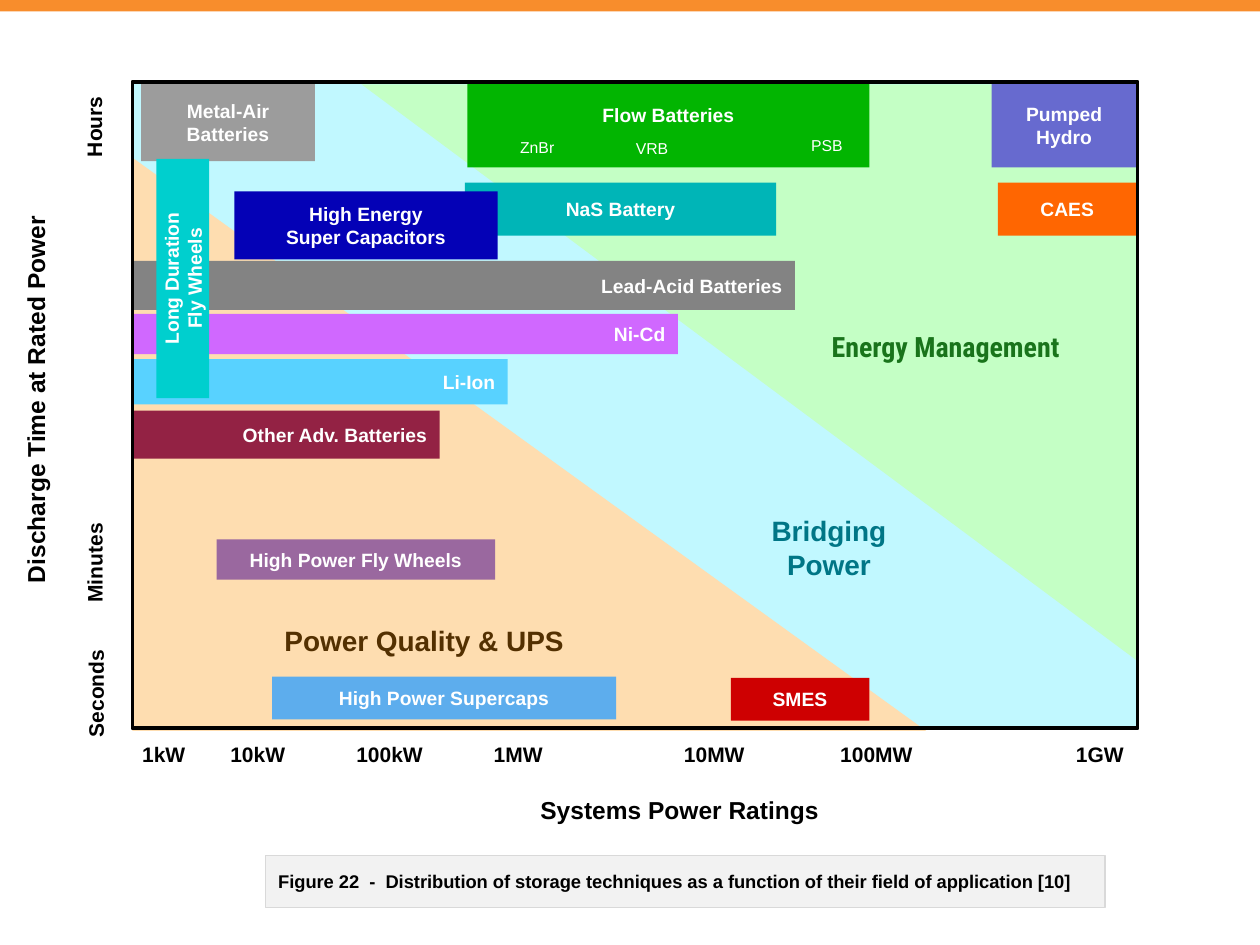
from dataclasses import dataclass

from pptx import Presentation
from pptx.dml.color import RGBColor
from pptx.enum.shapes import MSO_SHAPE as Shape
from pptx.enum.text import MSO_ANCHOR as Anchor, MSO_AUTO_SIZE as AutoSize, PP_ALIGN as Align
from pptx.util import Emu, Pt

PX = 9144  # 100 px to the inch


@dataclass(frozen=True)
class Theme:
    font: str = "Arial"
    condensed: str = "Roboto Condensed"
    black: str = "000000"
    white: str = "FFFFFF"
    accent: str = "F88D2C"
    caption_fill: str = "F2F2F2"
    caption_line: str = "D9D9D9"
    bridging_fill: str = "C1F8FF"
    bridging_text: str = "007686"
    quality_fill: str = "FEDDB0"
    quality_text: str = "533001"
    management_fill: str = "C4FFC5"
    management_text: str = "19741B"
    metal_air: str = "9C9C9C"
    flow: str = "02B501"
    pumped_hydro: str = "676ACF"
    supercaps: str = "5DADED"
    smes: str = "CE0001"
    caes: str = "FF6601"
    power_wheels: str = "9A689F"
    nas: str = "00B5B7"
    energy_caps: str = "0401B6"
    lead_acid: str = "838383"
    ni_cd: str = "D068FF"
    li_ion: str = "58D2FF"
    other: str = "932244"
    long_wheels: str = "00CFCE"
    zone_size: float = 16
    axis_size: float = 14
    tick_size: float = 12
    bar_size: float = 11
    caption_size: float = 10.5
    chemistry_size: float = 9


class Slide:
    def __init__(self, deck, theme):
        self.theme = theme
        self.page = deck.slides.add_slide(deck.slide_layouts[6])

    def add_text(self, box, text, size, color, align=None, bold=True, font=None):
        """Fill a box with one paragraph for each line of text."""
        frame = box.text_frame
        for index, line in enumerate(text.split("\n")):
            para = frame.add_paragraph() if index else frame.paragraphs[0]
            para.alignment = align
            span = para.add_run()
            span.text = line
            span.font.name = font or self.theme.font
            span.font.size = Pt(size)
            span.font.bold = bold
            span.font.color.rgb = RGBColor.from_string(color)

    def shape(self, place, fill=None, line=None, width=1, kind=Shape.RECTANGLE, turn=0):
        box = self.page.shapes.add_shape(kind, *(Emu(side * PX) for side in place))
        box.shadow.inherit = False
        box.rotation = turn
        if fill:
            box.fill.solid()
            box.fill.fore_color.rgb = RGBColor.from_string(fill)
        else:
            box.fill.background()
        if line:
            box.line.color.rgb = RGBColor.from_string(line)
            box.line.width = Pt(width)
        else:
            box.line.fill.background()
        return box

    def bar(self, place, fill, text, align=Align.CENTER, turn=0):
        """Add a coloured block that names one storage technique."""
        box = self.shape(place, fill, turn=turn)
        box.text_frame.word_wrap = True
        box.text_frame.vertical_anchor = Anchor.MIDDLE
        self.add_text(box, text, self.theme.bar_size, self.theme.white, align)
        return box

    def label(self, place, text, size, color, wrap=True, turn=0, **style):
        box = self.page.shapes.add_textbox(*(Emu(side * PX) for side in place))
        box.rotation = turn
        box.text_frame.word_wrap = wrap
        box.text_frame.auto_size = AutoSize.SHAPE_TO_FIT_TEXT
        self.add_text(box, text, size, color, **style)

    def axis_label(self, place, text, size, turn=0):
        self.label(place, text, size, self.theme.black, wrap=False, turn=turn)

    def caption(self, place, text):
        theme = self.theme
        box = self.shape(place, theme.caption_fill, theme.caption_line, 0.75)
        box.text_frame.word_wrap = True
        box.text_frame.vertical_anchor = Anchor.MIDDLE
        self.add_text(box, text, theme.caption_size, theme.black, Align.LEFT)


def add_zones(slide, plot):
    theme = slide.theme
    slide.shape(plot, theme.bridging_fill, theme.black, 1.5)
    slide.shape((105, 125, 630, 455), theme.quality_fill, kind=Shape.RIGHT_TRIANGLE)
    slide.shape((287, 67, 615, 457), theme.management_fill, kind=Shape.RIGHT_TRIANGLE, turn=180)
    slide.label((216, 490, 304, 37), "Power Quality & UPS", theme.zone_size, theme.quality_text)
    slide.label((608, 257, 285, 37), "Energy Management", theme.zone_size,
                theme.management_text, align=Align.CENTER, font=theme.condensed)
    slide.label((570, 403, 176, 64), "Bridging\nPower", theme.zone_size,
                theme.bridging_text, align=Align.CENTER)


def add_techniques(slide, plot_left):
    theme = slide.theme
    slide.bar((112, 66, 138, 62), theme.metal_air, "Metal-Air\nBatteries")
    flow = slide.bar((371, 66, 319, 67), theme.flow, "Flow Batteries")
    flow.text_frame.margin_bottom = Emu(22 * PX)  # room for the chemistries
    slide.bar((787, 66, 115, 67), theme.pumped_hydro, "Pumped\nHydro")

    chemistries = [
        ((403, 104, 80, 25), "ZnBr", Align.LEFT),
        ((634, 103, 67, 25), "PSB", Align.LEFT),
        ((484, 105, 67, 25), "VRB", Align.CENTER),
    ]
    for place, name, align in chemistries:
        slide.label(place, name, theme.chemistry_size, theme.white, align=align, bold=False)

    centred_bars = [
        ((216, 537, 273, 34), theme.supercaps, "High Power Supercaps"),
        ((580, 538, 110, 34), theme.smes, "SMES"),
        ((792, 145, 110, 42), theme.caes, "CAES"),
        ((172, 428, 221, 32), theme.power_wheels, "High Power Fly Wheels"),
        ((369, 145, 247, 42), theme.nas, "NaS Battery"),
        ((186, 152, 209, 54), theme.energy_caps, "High Energy\nSuper Capacitors"),
    ]
    for place, fill, name in centred_bars:
        slide.bar(place, fill, name)

    bars_from_axis = [
        (207, 526, 39, theme.lead_acid, "Lead-Acid Batteries"),
        (249, 433, 32, theme.ni_cd, "Ni-Cd"),
        (285, 298, 36, theme.li_ion, "Li-Ion"),
        (326, 244, 38, theme.other, "Other Adv. Batteries"),
    ]
    for top, width, height, fill, name in bars_from_axis:
        slide.bar((plot_left, top, width, height), fill, name, Align.RIGHT)
    slide.bar((50, 200, 190, 42), theme.long_wheels, "Long Duration\nFly Wheels", turn=270)


def add_axes(slide):
    theme = slide.theme
    power_ticks = [
        (103, 55, "1kW"), (173, 64, "10kW"), (273, 73, "100kW"), (382, 59, "1MW"),
        (533, 69, "10MW"), (657, 78, "100MW"), (844, 59, "1GW"),
    ]
    for left, width, name in power_ticks:
        slide.axis_label((left, 584, width, 30), name, theme.tick_size)
    slide.axis_label((419, 626, 242, 34), "Systems Power Ratings", theme.axis_size)

    time_ticks = [(31, 535, 90, "Seconds"), (33, 431, 84, "Minutes"), (40, 85, 69, "Hours")]
    for left, top, width, name in time_ticks:
        slide.axis_label((left, top, width, 30), name, theme.tick_size, turn=270)
    slide.axis_label((-128, 299, 313, 34), "Discharge Time at Rated Power", theme.axis_size, turn=270)


def main():
    deck = Presentation()
    deck.slide_width, deck.slide_height = Emu(1000 * PX), Emu(750 * PX)
    theme = Theme()
    slide = Slide(deck, theme)
    plot = (105, 65, 798, 513)

    slide.shape((0, -1, 1000, 10), theme.accent)
    slide.caption((211, 679, 666, 41), "Figure 22  -  Distribution of storage techniques "
                  "as a function of their field of application [10]")
    add_zones(slide, plot)
    add_techniques(slide, plot[0])
    slide.shape(plot, line=theme.black, width=2)
    add_axes(slide)
    deck.save("out.pptx")


if __name__ == "__main__":
    main()
